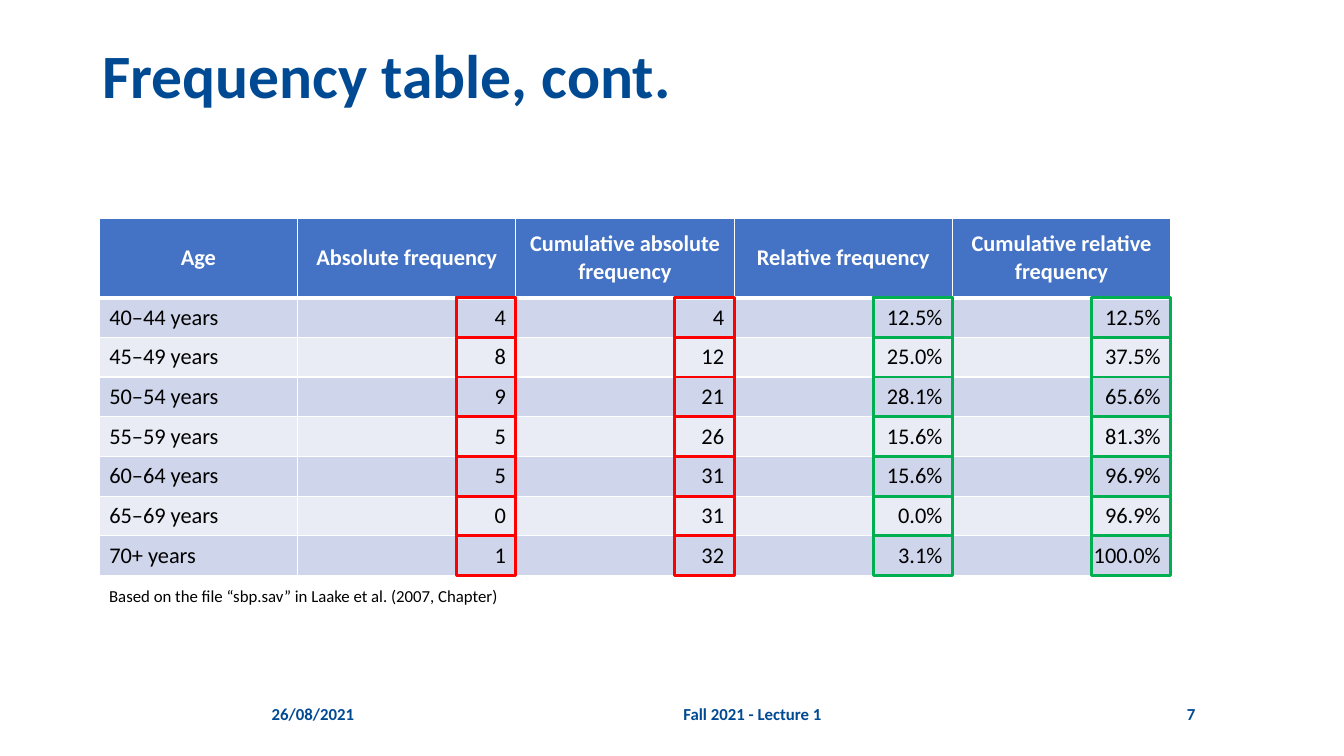
from lxml import etree
from pptx import Presentation
from pptx.dml.color import RGBColor
from pptx.enum.shapes import MSO_SHAPE
from pptx.enum.text import MSO_ANCHOR, MSO_AUTO_SIZE, PP_ALIGN
from pptx.oxml.ns import qn
from pptx.util import Pt

LEFT, CENTER, RIGHT = PP_ALIGN.LEFT, PP_ALIGN.CENTER, PP_ALIGN.RIGHT
TOP, MIDDLE = MSO_ANCHOR.TOP, MSO_ANCHOR.MIDDLE
RECT = MSO_SHAPE.RECTANGLE

# Content
TITLE = "Frequency table, cont."
HEADER = ["Age", "Absolute frequency", "Cumulative absolute frequency",
          "Relative frequency", "Cumulative relative frequency"]
ROWS = [
    ("40–44 years", "4", "4", "12.5%", "12.5%"),
    ("45–49 years", "8", "12", "25.0%", "37.5%"),
    ("50–54 years", "9", "21", "28.1%", "65.6%"),
    ("55–59 years", "5", "26", "15.6%", "81.3%"),
    ("60–64 years", "5", "31", "15.6%", "96.9%"),
    ("65–69 years", "0", "31", "0.0%", "96.9%"),
    ("70+ years", "1", "32", "3.1%", "100.0%"),
]
SOURCE_NOTE = "Based on the file “sbp.sav” in Laake et al. (2007, Chapter)"
FOOTERS = [  # text, left, width, alignment
    ("Fall 2021 - Lecture 1", 293, 489, CENTER),
    ("7", 793.5, 67.5, RIGHT),
    ("26/08/2021", 187, 94.5, LEFT),
]

# Colours and grid
NAVY, WHITE, BLACK = "004A93", "FFFFFF", "000000"
HEADER_FILL, BANDS = "4472C4", ("CFD5EA", "E9EBF5")
RED, GREEN = "FF0000", "00B050"
UNIT = 28.35  # one body row
TABLE_LEFT, TABLE_TOP = 2.5 * UNIT, 5.5 * UNIT
COL_WIDTHS = [5 * UNIT] + [5.5 * UNIT] * 4
HEADER_HEIGHT = 2 * UNIT
BODY_TOP = TABLE_TOP + HEADER_HEIGHT
BODY_BOTTOM = BODY_TOP + len(ROWS) * UNIT
FRAMES = [  # column, width, colour, cumulative
    (2, 1.5 * UNIT, RED, False),
    (4, 2 * UNIT, GREEN, False),
    (1, 1.5 * UNIT, RED, True),
    (3, 2 * UNIT, GREEN, True),
]


def rgb(value):
    return RGBColor.from_string(value)


def style(p, size, color, bold=False, align=LEFT):
    p.alignment = align
    p.font.name, p.font.size, p.font.bold = "Calibri", Pt(size), bold
    p.font.color.rgb = rgb(color)


def add_text(s, text, left, top, width, height, bold, color, align=LEFT):
    box = s.shapes.add_textbox(Pt(left), Pt(top), Pt(width), Pt(height))
    tf = box.text_frame
    tf.word_wrap, tf.vertical_anchor = True, MIDDLE
    tf.text = text
    style(tf.paragraphs[0], 12, color, bold, align)
    return tf


def set_borders(cell, widths):
    tcPr = cell._tc.get_or_add_tcPr()
    for side, width in zip("LRTB", widths):
        ln = etree.SubElement(tcPr, qn(f"a:ln{side}"), w=str(Pt(width)))
        fill = etree.SubElement(ln, qn("a:solidFill"))
        etree.SubElement(fill, qn("a:srgbClr"), val=WHITE)


def add_frame(s, left, top, width, height, color):
    sp = s.shapes.add_shape(RECT, Pt(left), Pt(top), Pt(width), Pt(height))
    sp.shadow.inherit = False
    sp.fill.background()
    sp.line.color.rgb = rgb(color)
    sp.line.width = Pt(2)


prs = Presentation()
prs.slide_width, prs.slide_height = Pt(960), Pt(540)
s = prs.slides.add_slide(prs.slide_layouts[5])

# Title
title = s.shapes.title
title.left, title.top, title.width, title.height = Pt(66), Pt(28.75), Pt(828), Pt(104.5)
tf = title.text_frame
tf.text = TITLE
tf.vertical_anchor, tf.auto_size = TOP, MSO_AUTO_SIZE.NONE
tf.paragraphs[0].line_spacing = 0.9
style(tf.paragraphs[0], 44, NAVY, True)

# Table
table = s.shapes.add_table(
    len(ROWS) + 1, len(HEADER), Pt(TABLE_LEFT), Pt(TABLE_TOP),
    Pt(sum(COL_WIDTHS)), Pt(BODY_BOTTOM - TABLE_TOP)).table
for column, width in zip(table.columns, COL_WIDTHS):
    column.width = Pt(width)
for i, values in enumerate([HEADER] + ROWS):
    is_header = i == 0
    table.rows[i].height = Pt(HEADER_HEIGHT if is_header else UNIT)
    for j, value in enumerate(values):
        cell = table.cell(i, j)
        set_borders(cell, (1, 1, 3 if i == 1 else 1, 3 if is_header else 1))
        cell.fill.solid()
        cell.fill.fore_color.rgb = rgb(HEADER_FILL if is_header else BANDS[(i - 1) % 2])
        cell.vertical_anchor = MIDDLE
        cell.text = value
        align = CENTER if is_header else RIGHT if j else LEFT
        style(cell.text_frame.paragraphs[0], 16, WHITE if is_header else BLACK,
              is_header, align)

# Source note and footer
for text, left, width, align in FOOTERS:
    add_text(s, text, left, 495.5, width, 28.75, True, NAVY, align)
note = add_text(s, SOURCE_NOTE, TABLE_LEFT, BODY_BOTTOM, 297.5, UNIT, False, BLACK)
note.word_wrap, note.auto_size = False, MSO_AUTO_SIZE.SHAPE_TO_FIT_TEXT

# Frames around the figures: one per row, or growing from the first row
for col, width, color, cumulative in FRAMES:
    left = TABLE_LEFT + sum(COL_WIDTHS[:col + 1]) - width
    for row in range(len(ROWS)):
        top, rows = (0, row + 1) if cumulative else (row, 1)
        add_frame(s, left, BODY_TOP + top * UNIT, width, rows * UNIT, color)

prs.save("out.pptx")
